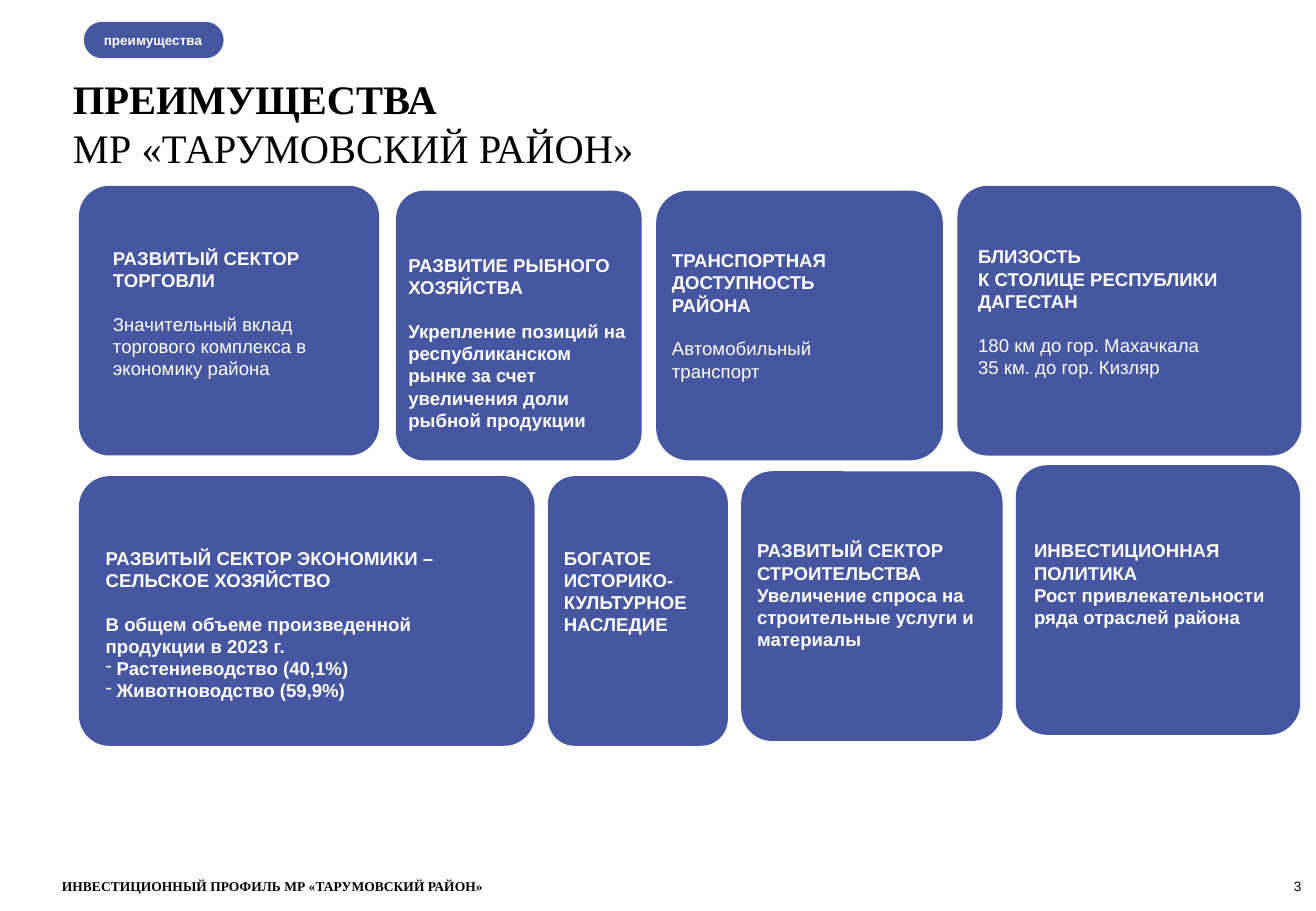
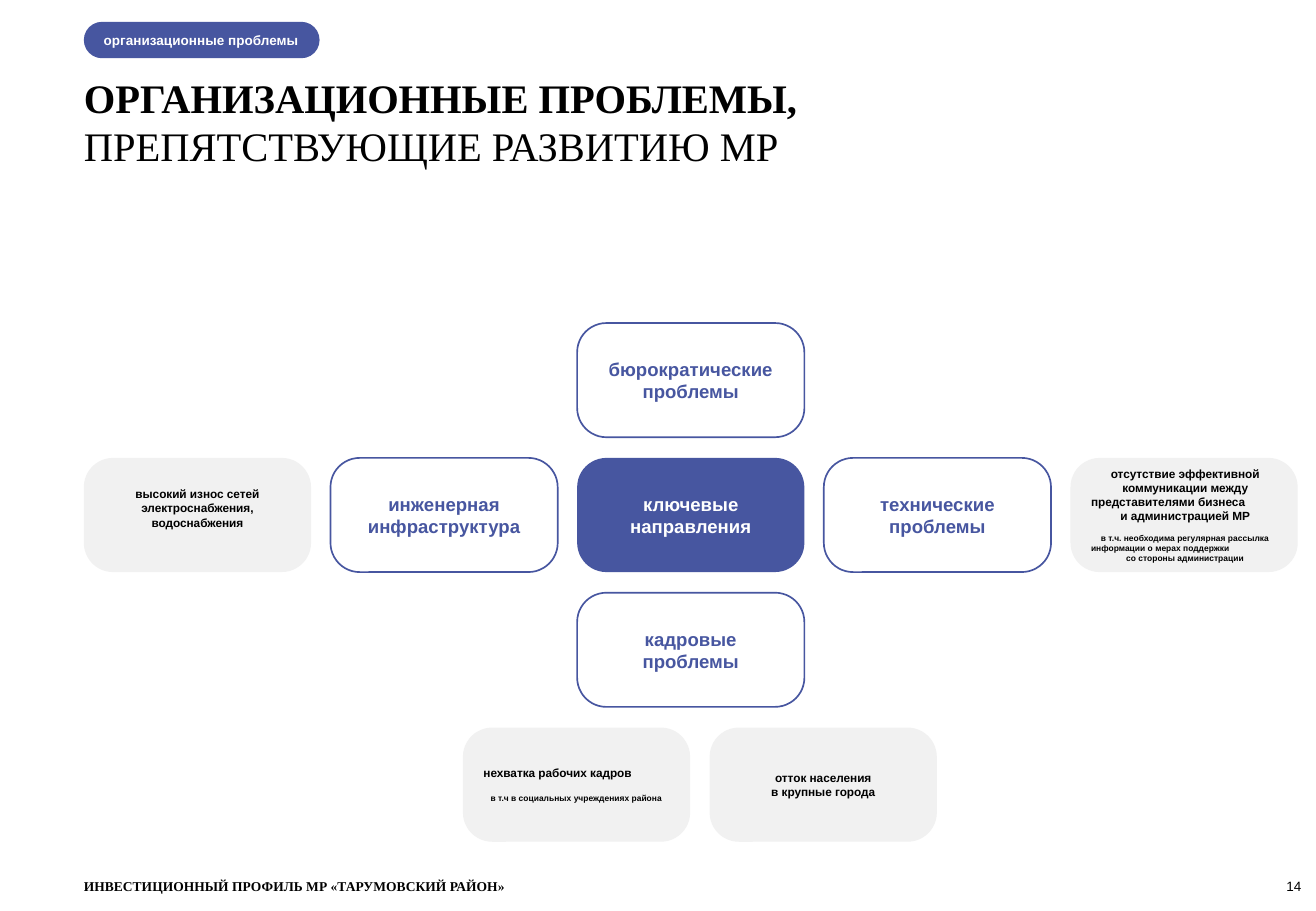
from dataclasses import dataclass

from lxml.etree import SubElement
from pptx import Presentation
from pptx.dml.color import RGBColor
from pptx.enum.shapes import MSO_SHAPE
from pptx.enum.text import MSO_ANCHOR, MSO_AUTO_SIZE, PP_ALIGN
from pptx.oxml.ns import qn
from pptx.util import Pt

PX = 9144  # EMU in one px, 100 px to the inch

BLUE = RGBColor(0x47, 0x56, 0xA0)
GREY = RGBColor(0xF1, 0xF1, 0xF1)
WHITE = RGBColor(0xFF, 0xFF, 0xFF)
BLACK = RGBColor(0, 0, 0)

SANS = "Arial"
SERIF = "Times New Roman"
LEFT, CENTER, RIGHT = PP_ALIGN.LEFT, PP_ALIGN.CENTER, PP_ALIGN.RIGHT

# Shared page frame
PILL_LEFT, PILL_TOP, PILL_HEIGHT = 69, 18, 30
FOOTER_TOP, FOOTER_HEIGHT = 723, 13
FOOTER_TEXT = "ИНВЕСТИЦИОННЫЙ ПРОФИЛЬ МР «ТАРУМОВСКИЙ РАЙОН»"

# Advantage cards
CARD_HEIGHT = 222

# Problem map: five columns and four rows of equal bubbles
BUBBLE_WIDTH, BUBBLE_HEIGHT, BUBBLE_ROUNDING = 187, 94, 0.256
COLUMNS = [69 + 203 * column for column in range(5)]
ROWS = [266 + 111 * row for row in range(4)]
STAFF_LEFTS = [381 + 203 * column for column in range(2)]


@dataclass
class Line:
    text: str
    size: float = 11
    bold: bool = True
    gap: float = 0  # points above the paragraph
    align: PP_ALIGN = LEFT
    dash: bool = False


def box(left, top, width, height):
    return [length * PX for length in (left, top, width, height)]


def add_dash(paragraph):
    properties = paragraph._p.get_or_add_pPr()
    properties.set("marL", str(9 * PX))
    properties.set("indent", str(-9 * PX))
    SubElement(properties, qn("a:buChar")).set("char", "-")


def write(frame, lines, color, font=SANS, insets=(0, 0, 0, 0), anchor=MSO_ANCHOR.TOP):
    frame.word_wrap = True
    frame.auto_size = MSO_AUTO_SIZE.NONE
    frame.vertical_anchor = anchor
    (frame.margin_left, frame.margin_top,
     frame.margin_right, frame.margin_bottom) = [inset * PX for inset in insets]
    for number, line in enumerate(lines):
        paragraph = frame.add_paragraph() if number else frame.paragraphs[0]
        paragraph.alignment = line.align
        paragraph.space_before = Pt(line.gap)
        if line.dash:
            add_dash(paragraph)
        run = paragraph.add_run()
        run.text = line.text
        run.font.name = font
        run.font.size = Pt(line.size)
        run.font.bold = line.bold
        run.font.color.rgb = color


def add_text(slide, area, lines, color, **style):
    write(slide.shapes.add_textbox(*box(*area)).text_frame, lines, color, **style)


def add_rounded(slide, area, rounding, fill=None, outline=None):
    panel = slide.shapes.add_shape(MSO_SHAPE.ROUNDED_RECTANGLE, *box(*area))
    panel.adjustments[0] = rounding
    panel.shadow.inherit = False
    if fill is None:
        panel.fill.background()
    else:
        panel.fill.solid()
        panel.fill.fore_color.rgb = fill
    if outline is None:
        panel.line.fill.background()
    else:
        panel.line.color.rgb = outline
        panel.line.width = Pt(1)
    return panel


def add_page(deck, section, pill_width, title_area, title, footer_left, number):
    slide = deck.slides.add_slide(deck.slide_layouts[5])

    # Two-line title
    heading = slide.shapes.title
    heading.left, heading.top, heading.width, heading.height = box(*title_area)
    strong, plain = title
    write(heading.text_frame, [Line(strong, 24), Line(plain, 24, bold=False)],
          BLACK, font=SERIF)

    # Section pill
    pill = add_rounded(slide, (PILL_LEFT, PILL_TOP, pill_width, PILL_HEIGHT), 0.5, BLUE)
    write(pill.text_frame, [Line(section, 8)], WHITE,
          insets=(12, 0, 0, 0), anchor=MSO_ANCHOR.MIDDLE)

    # Footer and page number
    add_text(slide, (footer_left, FOOTER_TOP, 800, FOOTER_HEIGHT),
             [Line(FOOTER_TEXT, 8)], BLACK, font=SERIF)
    add_text(slide, (991, FOOTER_TOP, 80, FOOTER_HEIGHT),
             [Line(number, 8, bold=False, align=RIGHT)], BLACK, anchor=MSO_ANCHOR.BOTTOM)
    return slide


def add_card(slide, left, top, width, rounding, text_area, lines):
    add_rounded(slide, (left, top, width, CARD_HEIGHT), rounding, BLUE)
    add_text(slide, text_area, lines, WHITE)


def add_bubble(slide, left, top, lines, color, fill=None, outline=None,
               insets=(10, 5, 10, 5)):
    bubble = add_rounded(slide, (left, top, BUBBLE_WIDTH, BUBBLE_HEIGHT),
                         BUBBLE_ROUNDING, fill, outline)
    write(bubble.text_frame, lines, color, insets=insets, anchor=MSO_ANCHOR.MIDDLE)


def add_direction(slide, column, row, text):
    add_bubble(slide, COLUMNS[column], ROWS[row], [Line(text, align=CENTER)],
               BLUE, outline=BLUE)


def add_note(slide, left, top, lines, insets=(10, 5, 10, 5)):
    add_bubble(slide, left, top, lines, BLACK, fill=GREY, insets=insets)


def build_advantages(deck):
    slide = add_page(deck, "преимущества", 115, (60, 61, 966, 81),
                     ("ПРЕИМУЩЕСТВА", "МР «ТАРУМОВСКИЙ РАЙОН»"), 51, "3")
    blank_line = 12.65
    cards = [
        # Upper row
        (65, 153, 247, 0.113, (93, 203, 180, 111), [
            Line("РАЗВИТЫЙ СЕКТОР ТОРГОВЛИ"),
            Line("Значительный вклад торгового комплекса в экономику района",
                 bold=False, gap=blank_line)]),
        (326, 157, 202, 0.113, (336, 209, 185, 204), [
            Line("РАЗВИТИЕ РЫБНОГО ХОЗЯЙСТВА"),
            Line("Укрепление позиций на республиканском рынке за счет "
                 "увеличения доли рыбной продукции", gap=blank_line)]),
        (540, 157, 236, 0.121, (553, 205, 185, 111), [
            Line("ТРАНСПОРТНАЯ"),
            Line("ДОСТУПНОСТЬ"),
            Line("РАЙОНА"),
            Line("Автомобильный транспорт", bold=False, gap=blank_line)]),
        (788, 153, 283, 0.112, (805, 202, 227, 111), [
            Line("БЛИЗОСТЬ"),
            Line("К СТОЛИЦЕ РЕСПУБЛИКИ ДАГЕСТАН"),
            Line("180 км до гор. Махачкала", bold=False, gap=blank_line),
            Line("35 км. до гор. Кизляр", bold=False)]),
        # Lower row
        (65, 392, 375, 0.113, (87, 450, 291, 130), [
            Line("РАЗВИТЫЙ СЕКТОР ЭКОНОМИКИ – СЕЛЬСКОЕ ХОЗЯЙСТВО"),
            Line("В общем объеме произведенной продукции в 2023 г.", gap=blank_line),
            Line("Растениеводство (40,1%)", dash=True),
            Line("Животноводство (59,9%)", dash=True)]),
        (451, 392, 148, 0.149, (464, 450, 107, 74), [
            Line("БОГАТОЕ ИСТОРИКО-КУЛЬТУРНОЕ НАСЛЕДИЕ")]),
        (610, 388, 215, 0.119, (623, 444, 191, 93), [
            Line("РАЗВИТЫЙ СЕКТОР СТРОИТЕЛЬСТВА"),
            Line("Увеличение спроса на строительные услуги и материалы")]),
        (836, 383, 234, 0.118, (851, 444, 202, 111), [
            Line("ИНВЕСТИЦИОННАЯ ПОЛИТИКА"),
            Line("Рост привлекательности ряда отраслей района")]),
    ]
    for card in cards:
        add_card(slide, *card)


def build_problems(deck):
    slide = add_page(deck, "организационные проблемы", 194, (69, 60, 1002, 81),
                     ("ОРГАНИЗАЦИОННЫЕ ПРОБЛЕМЫ,", "ПРЕПЯТСТВУЮЩИЕ РАЗВИТИЮ МР"),
                     69, "14")

    # Centre and the four directions around it
    add_bubble(slide, COLUMNS[2], ROWS[1], [Line("ключевые направления", align=CENTER)],
               WHITE, fill=BLUE)
    add_direction(slide, 2, 0, "бюрократические проблемы")
    add_direction(slide, 1, 1, "инженерная инфраструктура")
    add_direction(slide, 3, 1, "технические проблемы")
    add_direction(slide, 2, 2, "кадровые проблемы")

    # Notes at the outer ends
    add_note(slide, COLUMNS[0], ROWS[1], [
        Line("высокий износ сетей электроснабжения, водоснабжения", 7, align=CENTER),
    ], insets=(10, 5, 10, 16))
    add_note(slide, COLUMNS[4], ROWS[1], [
        Line("отсутствие эффективной", 7, align=CENTER),
        Line("коммуникации между", 7, align=CENTER),
        Line("представителями бизнеса", 7),
        Line("и администрацией МР", 7, align=CENTER),
        Line("в т.ч. необходима регулярная рассылка", 5, gap=5.75, align=CENTER),
        Line("информации о мерах поддержки", 5),
        Line("со стороны администрации", 5, align=CENTER),
    ], insets=(10, 5, 8, 5))

    # Staff notes below
    add_note(slide, STAFF_LEFTS[0], ROWS[3], [
        Line("нехватка рабочих кадров", 7),
        Line("в т.ч в социальных учреждениях района", 5, gap=8, align=CENTER)])
    add_note(slide, STAFF_LEFTS[1], ROWS[3], [
        Line("отток населения", 7, align=CENTER),
        Line("в крупные города", 7, align=CENTER)])


def main():
    deck = Presentation()
    deck.slide_width, deck.slide_height = 1083 * PX, 750 * PX
    build_advantages(deck)
    build_problems(deck)
    deck.save("out.pptx")


if __name__ == "__main__":
    main()
